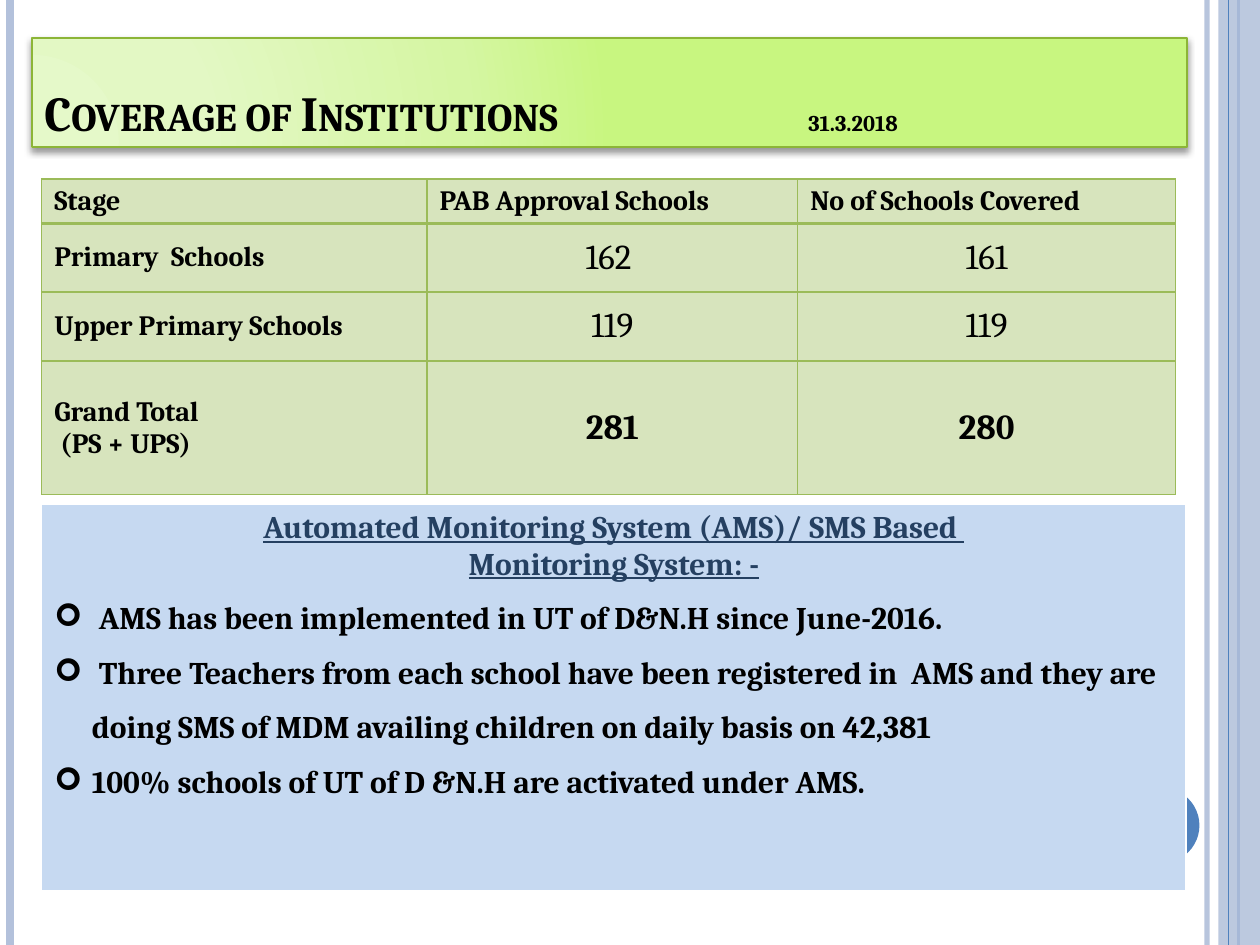
from dataclasses import dataclass

from lxml import etree
from pptx import Presentation
from pptx import util as u
from pptx.dml.color import RGBColor as Rgb
from pptx.enum import shapes, text
from pptx.oxml import parse_xml
from pptx.oxml.ns import nsdecls, qn


@dataclass
class Theme:
    font: str = "Cambria"
    black: str = "000000"
    white: str = "FFFFFF"
    navy: str = "254061"
    blue: str = "4F81BD"
    haze: str = "B3C1DB"
    sky: str = "C6D9F1"
    leaf: str = "9BBB59"
    moss: str = "D7E4BD"
    rim: str = "8CB537"
    glow: tuple = ((0, "E5F9C9"), (30, "E3F8C4"), (75, "D5F6A3"), (100, "C8F680"))
    head: int = 28
    num: int = 20
    list: int = 18
    body: int = 16


def style(run, size, color=Theme.black, bold=True, line=False):
    font = run.font
    font.name, font.size, font.bold = Theme.font, u.Pt(size), bold
    font.underline = line
    font.color.rgb = Rgb.from_string(color)


def finish(cell, fill, edge, base=1):
    """Draw the cell's borders, with base as the width of the lower one, and fill it."""
    props = cell._tc.get_or_add_tcPr()
    for side, width in zip("LRTB", (1, 1, 1, base)):
        props.append(parse_xml(
            f'<a:ln{side} {nsdecls("a")} w="{u.Pt(width)}"><a:solidFill>'
            f'<a:srgbClr val="{edge}"/></a:solidFill></a:ln{side}>'))
    cell.fill.solid()
    cell.fill.fore_color.rgb = Rgb.from_string(fill)


t = Theme()
deck = Presentation()
deck.slide_width, deck.slide_height = u.Cm(25.4), u.Cm(19.05)
slide = deck.slides.add_slide(deck.slide_layouts[5])
tree = slide.shapes

# Side rules, right strip and disc
rules = [(24.33, t.haze, 3, 93), (0.2, t.haze, 4.5, 100), (24.97, t.blue, 1.5, 100),
         (24.77, t.blue, 0.75, 100)]
for x, color, width, alpha in rules:
    rule = tree.add_connector(shapes.MSO_CONNECTOR.STRAIGHT,
                              u.Cm(x), 0, u.Cm(x), deck.slide_height)
    rule.line.color.rgb = Rgb.from_string(color)
    rule.line.width = u.Pt(width)
    props = rule._element.spPr
    etree.SubElement(props, qn("a:effectLst"))
    if alpha < 100:
        tone = props.find(".//" + qn("a:srgbClr"))
        etree.SubElement(tone, qn("a:alpha")).set("val", str(alpha * 1000))

kind = shapes.MSO_SHAPE
strip = tree.add_shape(kind.RECTANGLE, u.Cm(24.56), 0, u.Cm(0.84), deck.slide_height)
disc = tree.add_shape(kind.OVAL, u.Cm(22.66), u.Cm(15.88), u.Cm(1.52), u.Cm(1.52))
for shape, color in ((strip, t.haze), (disc, t.blue)):
    shape.shadow.inherit = False
    shape.fill.solid()
    shape.fill.fore_color.rgb = Rgb.from_string(color)
    shape.line.fill.background()
tone = strip._element.spPr.find(".//" + qn("a:srgbClr"))
etree.SubElement(tone, qn("a:alpha")).set("val", "87000")
rules_end = rule._element
rules_end.addprevious(strip._element)

# Title banner, with the date at a tab stop
title = tree.title
title.left, title.top = u.Cm(0.64), u.Cm(0.76)
title.width, title.height = u.Cm(23.29), u.Cm(2.21)
stops = "".join(f'<a:gs pos="{pos * 1000}"><a:srgbClr val="{color}"/></a:gs>'
                for pos, color in t.glow)
props = title._element.spPr
props.append(parse_xml(
    f'<a:gradFill {nsdecls("a")} rotWithShape="1"><a:gsLst>{stops}</a:gsLst>'
    '<a:path path="circle"><a:fillToRect l="5000" t="100000" r="120000" b="10000"/>'
    '</a:path></a:gradFill>'))
title.line.color.rgb = Rgb.from_string(t.rim)
title.line.width = u.Pt(1)
props.append(parse_xml(
    f'<a:effectLst {nsdecls("a")}><a:outerShdw blurRad="{u.Pt(4)}" dist="{u.Pt(2)}" '
    f'dir="5400000" rotWithShape="0"><a:srgbClr val="{t.black}">'
    '<a:alpha val="40000"/></a:srgbClr></a:outerShdw></a:effectLst>'))
frame = title.text_frame
frame.auto_size = text.MSO_AUTO_SIZE.NONE
frame.vertical_anchor = text.MSO_ANCHOR.BOTTOM
para = frame.paragraphs[0]
para.text = "Coverage of Institutions\t"
para.alignment = text.PP_ALIGN.LEFT
para.add_run().text = "31.3.2018"
for run, size in zip(para.runs, (t.head, t.body)):
    style(run, size)
    run.font._element.set("cap", "small")
tabs = etree.SubElement(para._p.get_or_add_pPr(), qn("a:tabLst"))
tab = etree.SubElement(tabs, qn("a:tab"))
tab.set("pos", str(u.Cm(15.4)))
tab.set("algn", "l")
disc._element.addnext(title._element)

# Table of schools
rows = [("Stage", "PAB Approval Schools", "No of Schools Covered"),
        ("Primary  Schools", "162 ", "161"),
        ("Upper Primary Schools", "119", "119"),
        ("Grand Total\n (PS + UPS)", "281", "280")]
grid = tree.add_table(4, 3, u.Cm(0.84), u.Cm(3.61), u.Cm(22.86), u.Cm(6.35)).table
grid.first_row = grid.horz_banding = False
for col, width in zip(grid.columns, (7.77, 7.47, 7.62)):
    col.width = u.Cm(width)
for row, high in zip(grid.rows, (0.89, 1.37, 1.4, 2.69)):
    row.height = u.Cm(high)
for i, row in enumerate(rows):
    for j, words in enumerate(row):
        cell = grid.cell(i, j)
        cell.text_frame.text = words
        count = i > 0 and j > 0
        if i:
            cell.vertical_anchor = text.MSO_ANCHOR.MIDDLE
        for para in cell.text_frame.paragraphs:
            if count:
                para.alignment = text.PP_ALIGN.CENTER
            style(para.runs[0], t.num if count else t.body,
                  bold=not count or i == 3)
        finish(cell, t.moss, t.leaf, base=1 if i else 2)

# Panel on the monitoring system
heads = ["Automated Monitoring System (AMS)/ SMS Based ", "Monitoring System: -"]
points = [" AMS has been implemented in UT of D&N.H since June-2016.",
          " Three Teachers from each school have been registered in  AMS and they are "
          "doing SMS of MDM availing children on daily basis on 42,381",
          "100% schools of UT of D &N.H are activated under AMS."]
panel = tree.add_table(1, 1, u.Cm(0.84), u.Cm(10.16), u.Cm(23.07), u.Cm(7.82)).table
panel.first_row = panel.horz_banding = False
cell = panel.cell(0, 0)
cell.text_frame.text = "\n".join(heads + points)
for i, para in enumerate(cell.text_frame.paragraphs):
    if i < len(heads):
        para.alignment = text.PP_ALIGN.CENTER
        style(para.runs[0], t.list, t.navy, line=True)
        continue
    style(para.runs[0], t.list)
    para.line_spacing = 1.5
    props = para._p.get_or_add_pPr()
    props.set("marL", str(u.Cm(0.76)))
    props.set("indent", str(-u.Cm(0.76)))
    etree.SubElement(props, qn("a:buFont")).set("typeface", "Wingdings")
    etree.SubElement(props, qn("a:buChar")).set("char", "➢")
finish(cell, t.sky, t.white, base=3)

deck.save("out.pptx")
